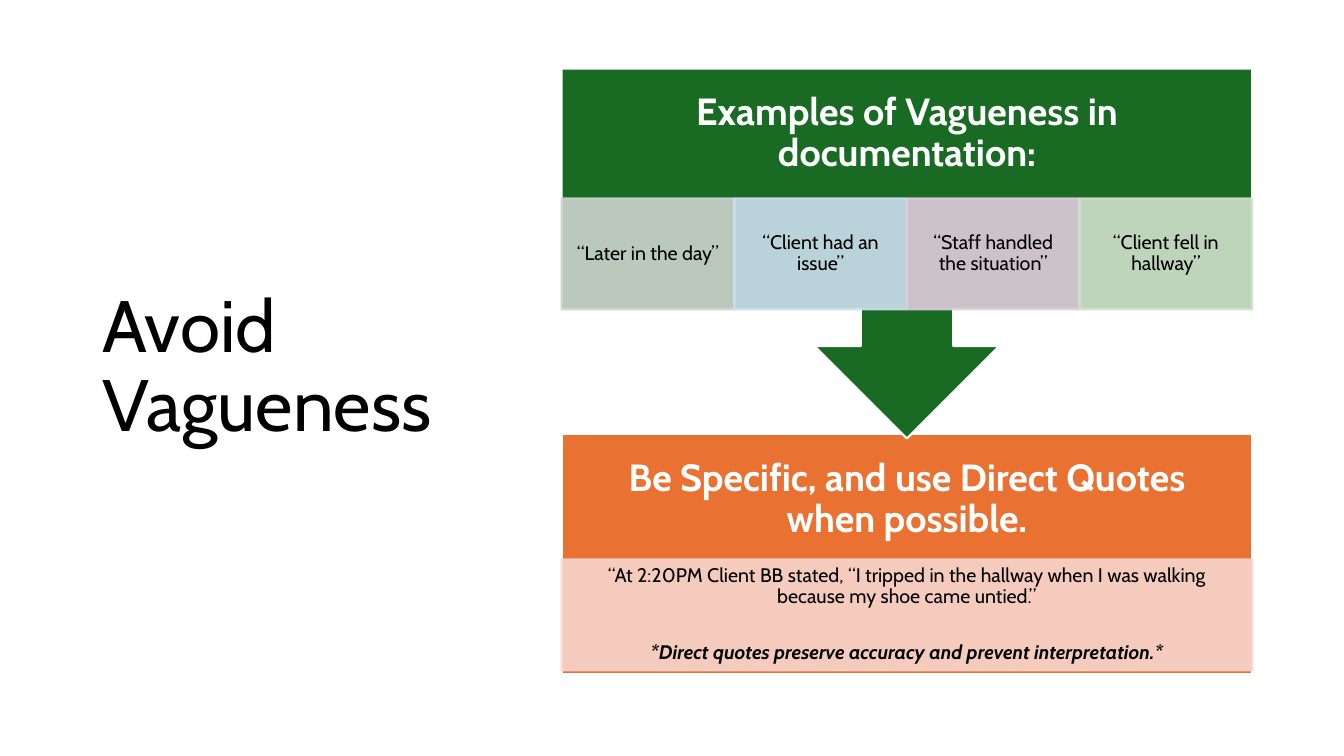
from lxml import etree
from pptx import Presentation
from pptx.dml.color import RGBColor
from pptx.enum import shapes, text
from pptx.oxml import ns
from pptx.util import Inches, Pt

FONT = "Cabin"
BLACK = RGBColor(0x00, 0x00, 0x00)
WHITE = RGBColor(0xFF, 0xFF, 0xFF)
GREEN = RGBColor(0x19, 0x6B, 0x24)
ORANGE = RGBColor(0xE9, 0x71, 0x32)
PEACH = RGBColor(0xF7, 0xD5, 0xCE)
SAGE = RGBColor(0xCC, 0xD4, 0xCD)
SKY = RGBColor(0xCC, 0xDF, 0xEF)
MAUVE = RGBColor(0xDF, 0xCD, 0xDC)
MINT = RGBColor(0xD0, 0xE1, 0xCD)

LEFT, WIDTH = 5.57, 6.85
TITLE = {"size": Pt(52), "color": BLACK}
HEADING = {"size": Pt(27), "bold": True, "color": WHITE}
BODY = {"size": Pt(14), "color": BLACK}
EMPHASIS = {**BODY, "bold": True, "italic": True}
CENTER = {"alignment": text.PP_ALIGN.CENTER}

EXAMPLES = [
    ("“Later in the day”", SAGE),
    ("“Client had an issue”", SKY),
    ("“Staff handled the situation”", MAUVE),
    ("“Client fell in hallway”", MINT),
]
QUOTE = (
    "“At 2:20PM Client BB stated, “I tripped in the hallway when I was "
    "walking because my shoe came untied.”"
)
REMINDER = "*Direct quotes preserve accuracy and prevent interpretation.*"


def write_text(shape, paragraphs, margins):
    """Fill a shape with (wording, font format, paragraph format) entries."""
    frame = shape.text_frame
    frame.word_wrap = True
    frame.vertical_anchor = text.MSO_ANCHOR.MIDDLE
    frame.margin_left = frame.margin_right = Inches(margins[0])
    frame.margin_top = frame.margin_bottom = Inches(margins[1])
    for index, (wording, font_format, layout) in enumerate(paragraphs):
        paragraph = frame.add_paragraph() if index else frame.paragraphs[0]
        for name, value in {"line_spacing": 0.9, **layout}.items():
            setattr(paragraph, name, value)
        run = paragraph.add_run()
        run.text = wording
        run.font.name = FONT
        for name, value in font_format.items():
            target = run.font.color if name == "color" else run.font
            setattr(target, "rgb" if name == "color" else name, value)


def add_label(slide, box, wording, font_format, layout, margins):
    """Add a text box holding one paragraph."""
    label = slide.shapes.add_textbox(*map(Inches, box))
    write_text(label, [(wording, font_format, layout)], margins)


def add_block(slide, kind, box, fill, line):
    """Add an outlined, solid shape."""
    block = slide.shapes.add_shape(kind, *map(Inches, box))
    block.shadow.inherit = False
    block.fill.solid()
    block.fill.fore_color.rgb = fill
    block.line.color.rgb = line
    block.line.width = Pt(1.5)
    return block


def add_tinted_cell(slide, box, color, paragraphs):
    """Add a slightly transparent rectangle with text."""
    cell = add_block(slide, shapes.MSO_SHAPE.RECTANGLE, box, color, color)
    for color_element in cell._element.spPr.iter(ns.qn("a:srgbClr")):
        etree.SubElement(color_element, ns.qn("a:alpha"), val="90000")
    write_text(cell, paragraphs, (0.11, 0.02))


def add_advice(slide):
    """Add the orange panel with the recommended practice."""
    add_block(slide, shapes.MSO_SHAPE.RECTANGLE,
              (LEFT, 4.31, WIDTH, 2.38), ORANGE, WHITE)
    add_label(slide, (LEFT, 4.31, WIDTH, 1.29),
              "Be Specific, and use Direct Quotes when possible.",
              HEADING, CENTER, (0.21, 0.21))
    add_tinted_cell(slide, (LEFT, 5.55, WIDTH, 1.1), PEACH, [
        (QUOTE, BODY, CENTER),
        (REMINDER, EMPHASIS, {**CENTER, "space_before": Pt(25)}),
    ])


def add_examples(slide):
    """Add the green arrow panel with its row of vague phrases."""
    callout = add_block(slide, shapes.MSO_SHAPE.UP_ARROW_CALLOUT,
                        (LEFT, 0.68, WIDTH, 3.67), GREEN, WHITE)
    callout.rotation = 180
    add_label(slide, (LEFT, 0.68, WIDTH, 1.29),
              "Examples of Vagueness in documentation:",
              HEADING, CENTER, (0.21, 0.21))
    cell_width = WIDTH / len(EXAMPLES)
    for column, (phrase, color) in enumerate(EXAMPLES):
        box = (LEFT + column * cell_width, 1.97, cell_width, 1.1)
        add_tinted_cell(slide, box, color, [(phrase, BODY, CENTER)])


def main():
    """Build and save the slide."""
    presentation = Presentation()
    presentation.slide_width = Inches(13.33)
    presentation.slide_height = Inches(7.5)
    slide = presentation.slides.add_slide(presentation.slide_layouts[6])
    add_label(slide, (0.92, 0.61, 3.69, 6.09), "Avoid Vagueness",
              TITLE, {}, (0.1, 0.05))
    add_advice(slide)
    add_examples(slide)
    presentation.save("out.pptx")


if __name__ == "__main__":
    main()
